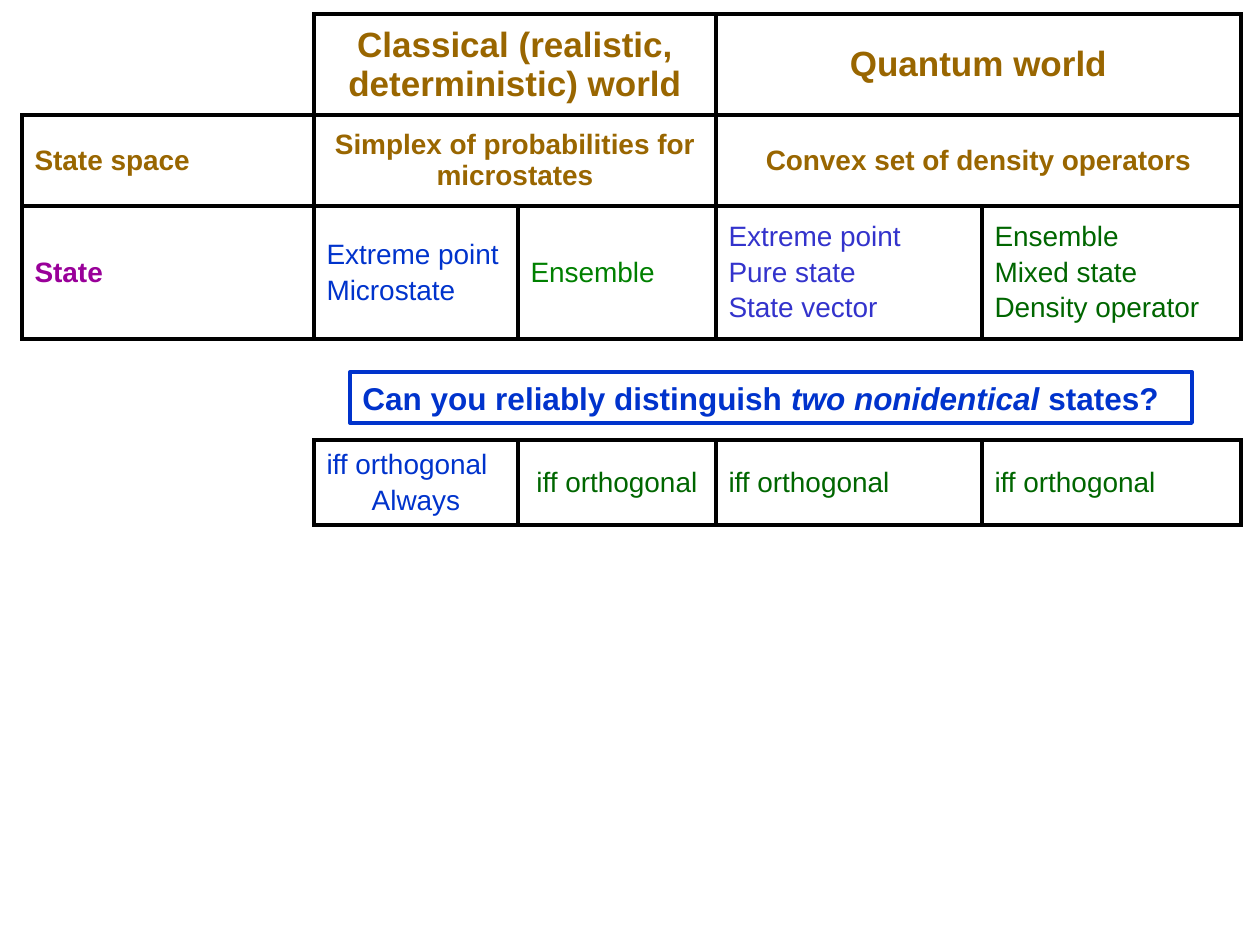
from lxml.etree import SubElement
from pptx import Presentation
from pptx.dml.color import RGBColor
from pptx.enum.shapes import MSO_SHAPE
from pptx.enum.text import MSO_ANCHOR, PP_ALIGN
from pptx.oxml.ns import qn
from pptx.util import Emu, Pt

PX = 914400 / 126
FONT = "Arial"
LINE = Pt(2.25)
COLORS = {
    "black": "000000", "brown": "996600", "purple": "990099", "blue": "0033CC",
    "green": "008000", "indigo": "3333CC", "dark_green": "006600",
}
COLUMNS = [292, 204, 198, 266, 259]
LEFT, CENTER = PP_ALIGN.LEFT, PP_ALIGN.CENTER


def px(length):
    return Emu(round(length * PX))


def style_font(font, size, color, bold=False, italic=False):
    font.name, font.size, font.bold, font.italic = FONT, Pt(size), bold, italic
    font.color.rgb = RGBColor.from_string(COLORS[color])


def set_borders(cell, sides):
    """Draw the named sides in black and clear the others."""
    properties = cell._tc.get_or_add_tcPr()
    for side in "LRTB":
        edge = SubElement(properties, qn(f"a:ln{side}"), w=str(LINE))
        if side in sides:
            fill = SubElement(edge, qn("a:solidFill"))
            SubElement(fill, qn("a:srgbClr"), val=COLORS["black"])
        else:
            SubElement(edge, qn("a:noFill"))


def write_cell(cell, lines, color, size=16, bold=False, aligns=(LEFT,)):
    """Write one paragraph per line; the last alignment serves all later lines."""
    frame = cell.text_frame
    frame.text = "\n".join(lines)
    cell.vertical_anchor = MSO_ANCHOR.MIDDLE
    for index, paragraph in enumerate(frame.paragraphs):
        paragraph.alignment = aligns[min(index, len(aligns) - 1)]
        paragraph.space_before = Pt(size / 6)
        style_font(paragraph.runs[0].font, size, color, bold)


def add_grid(slide, left, top, row_heights, corner_sides):
    """Add a ruled table whose top left cell shows only the given sides."""
    table = slide.shapes.add_table(
        len(row_heights), len(COLUMNS), px(left), px(top),
        px(sum(COLUMNS)), px(sum(row_heights))).table
    table.first_row = table.horz_banding = False
    for column, width in zip(table.columns, COLUMNS):
        column.width = px(width)
    for row, height in zip(table.rows, row_heights):
        row.height = px(height)
    for row in range(len(row_heights)):
        for column in range(len(COLUMNS)):
            cell = table.cell(row, column)
            set_borders(cell, "LRTB" if row or column else corner_sides)
            cell.fill.background()
    return table


def add_worlds(slide, left, top):
    table = add_grid(slide, left, top, [101, 91, 133], "RB")

    # Headings that span both columns of a world
    headings = [
        (20, "Classical (realistic, deterministic) world", "Quantum world"),
        (16, "Simplex of probabilities for microstates",
         "Convex set of density operators"),
    ]
    for row, (size, *worlds) in enumerate(headings):
        for column, heading in zip((1, 3), worlds):
            cell = table.cell(row, column)
            cell.merge(table.cell(row, column + 1))
            write_cell(cell, [heading], "brown", size, True, (CENTER,))

    # Row labels
    write_cell(table.cell(1, 0), ["State space"], "brown", bold=True)
    write_cell(table.cell(2, 0), ["State"], "purple", bold=True)

    # Kinds of state
    states = [
        (["Extreme point", "Microstate"], "blue"),
        (["Ensemble"], "green"),
        (["Extreme point", "Pure state", "State vector"], "indigo"),
        (["Ensemble", "Mixed state", "Density operator"], "dark_green"),
    ]
    for column, (lines, color) in enumerate(states, start=1):
        write_cell(table.cell(2, column), lines, color)


def add_question(slide, left, top, width, height):
    box = slide.shapes.add_shape(
        MSO_SHAPE.RECTANGLE, px(left), px(top), px(width), px(height))
    box.shadow.inherit = False
    box.fill.background()
    box.line.color.rgb = RGBColor.from_string(COLORS["blue"])
    box.line.width = LINE
    frame = box.text_frame
    frame.word_wrap = False
    frame.vertical_anchor = MSO_ANCHOR.MIDDLE
    question = frame.paragraphs[0]
    question.alignment = LEFT
    for words, italic in [("Can you reliably distinguish ", False),
                          ("two nonidentical ", True), ("states?", False)]:
        run = question.add_run()
        run.text = words
        style_font(run.font, 18, "blue", True, italic)


def add_answers(slide, left, top):
    table = add_grid(slide, left, top, [85], "R")
    answers = [
        (["iff orthogonal", "Always"], "blue", (LEFT, CENTER)),
        (["iff orthogonal"], "dark_green", (CENTER,)),
        (["iff orthogonal"], "dark_green", (LEFT,)),
        (["iff orthogonal"], "dark_green", (LEFT,)),
    ]
    for column, (lines, color, aligns) in enumerate(answers, start=1):
        write_cell(table.cell(0, column), lines, color, aligns=aligns)


def main():
    presentation = Presentation()
    presentation.slide_width, presentation.slide_height = px(1260), px(945)
    slide = presentation.slides.add_slide(presentation.slide_layouts[6])
    add_worlds(slide, 22, 14)
    add_question(slide, 350, 372, 842, 51)
    add_answers(slide, 22, 440)
    presentation.save("out.pptx")


if __name__ == "__main__":
    main()
